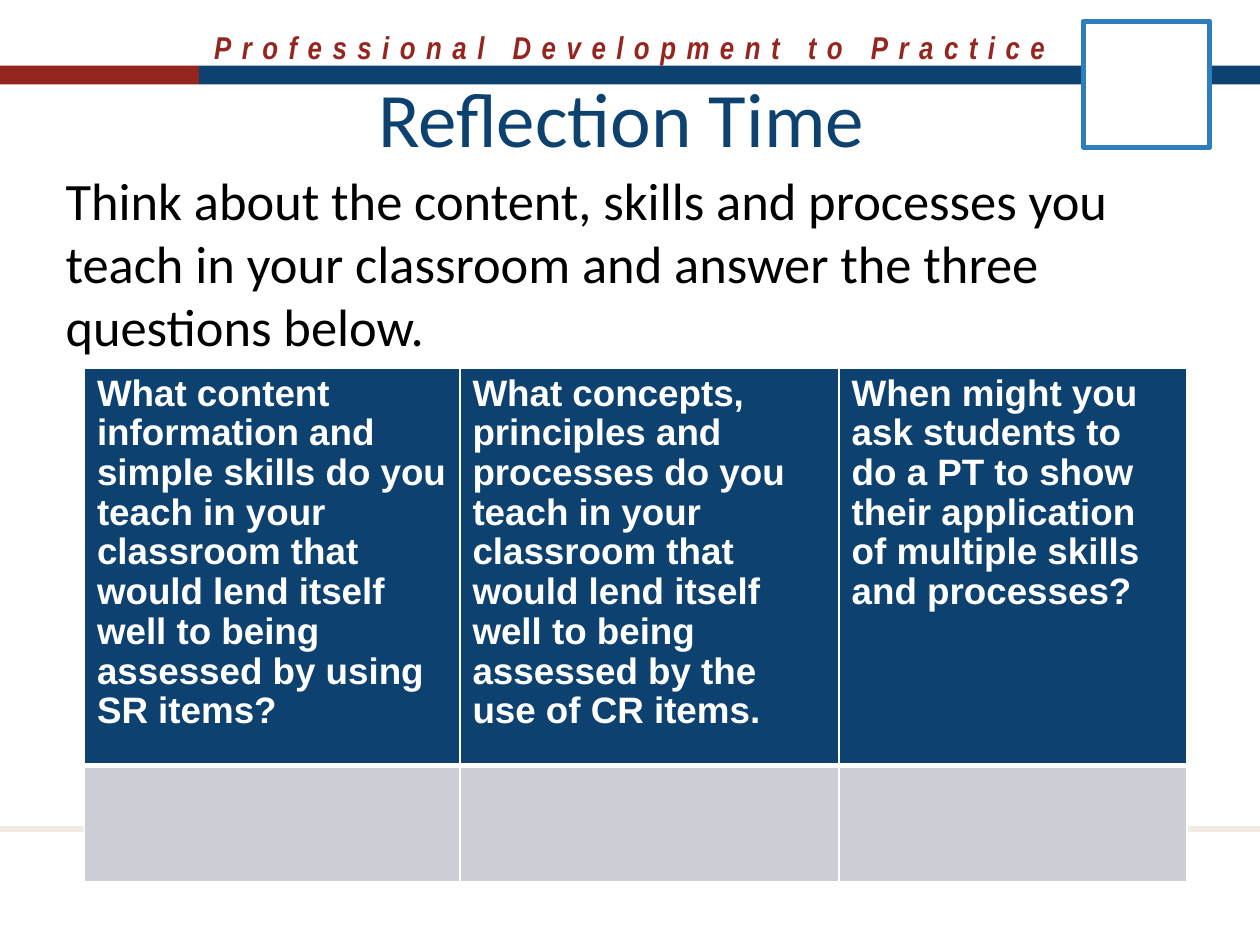
from dataclasses import dataclass

from pptx import Presentation
from pptx.dml.color import RGBColor as RGB
from pptx.enum.shapes import MSO_CONNECTOR as CONN, MSO_SHAPE as SHAPE
from pptx.enum.text import MSO_ANCHOR as ANCHOR, MSO_AUTO_SIZE as FIT, PP_ALIGN as ALIGN
from pptx.oxml import parse_xml
from pptx.oxml.ns import nsdecls
from pptx.oxml.xmlchemy import OxmlElement
from pptx.util import Inches, Pt


@dataclass(frozen=True)
class Theme:
    """Colours, fonts and type sizes of the slide."""
    red: str = "95261F"
    navy: str = "0D4170"
    blue: str = "2D7EBA"
    sand: str = "F2EDE2"
    grey: str = "CCCFD5"
    white: str = "FFFFFF"
    black: str = "000000"
    banner_font: str = "Arial Narrow"
    text_font: str = "Calibri"
    table_font: str = "Arial"
    banner_pt: int = 18
    title_pt: int = 44
    body_pt: int = 30
    table_pt: int = 21


T = Theme()
WIDTH, HEIGHT = 10, 7.5
COLS = [2.98, 3.01, 2.76]
ROWS = [3.02, 0.92]
QUESTIONS = [
    "What content information and simple skills do you teach in your classroom "
    "that would lend itself well to being assessed by using SR items?",
    "What concepts, principles and processes do you teach in your classroom "
    "that would lend itself well to being assessed by the use of CR items.",
    "When might you ask students to do a PT to show their application of "
    "multiple skills and processes?",
]


def box(x, y, w, h):
    """Convert a place in inches to slide units."""
    return [Inches(v) for v in (x, y, w, h)]


def write(tf, text, color, **font):
    """Write one formatted paragraph and return it."""
    tf.word_wrap = True
    p = tf.paragraphs[0]
    r = p.add_run()
    r.text = text
    for key, value in font.items():
        setattr(r.font, key, value)
    r.font.color.rgb = RGB.from_string(color)
    return p


def add_rect(s, place, fill, line=None):
    """Add a flat rectangle with an optional outline."""
    sp = s.shapes.add_shape(SHAPE.RECTANGLE, *box(*place))
    sp.shadow.inherit = False
    sp.fill.solid()
    sp.fill.fore_color.rgb = RGB.from_string(fill)
    if line:
        sp.line.color.rgb = RGB.from_string(line)
        sp.line.width = Pt(3)
    else:
        sp.line.fill.background()


def add_rule(s, y):
    """Add a pale rule across the whole slide."""
    line = s.shapes.add_connector(CONN.STRAIGHT, *box(0, y, WIDTH, y))
    line.line.color.rgb = RGB.from_string(T.sand)
    line.line.width = Pt(3)
    line._element.spPr.append(OxmlElement("a:effectLst"))


def add_banner(s, text):
    """Add the spaced heading above the colour bars."""
    tf = s.shapes.add_textbox(*box(0, 0.17, WIDTH, 0.4)).text_frame
    p = write(tf, text, T.red, name=T.banner_font, size=Pt(T.banner_pt), bold=True, italic=True)
    p.alignment = ALIGN.CENTER
    p.runs[0]._r.get_or_add_rPr().set("spc", "600")


def fill_placeholder(sp, place, text, color, size):
    """Move a placeholder and give it formatted text."""
    sp.left, sp.top, sp.width, sp.height = box(*place)
    sp.text_frame.auto_size = FIT.NONE
    return write(sp.text_frame, text, color, name=T.text_font, size=Pt(size))


def remove_bullet(p):
    """Set a paragraph flush left without a bullet."""
    pPr = p._p.get_or_add_pPr()
    pPr.set("marL", "0")
    pPr.set("indent", "0")
    pPr.append(OxmlElement("a:buNone"))


def style_cell(cell, fill, top, bottom):
    """Give a cell white borders and a solid fill."""
    tcPr = cell._tc.get_or_add_tcPr()
    for side, width in {"L": 1, "R": 1, "T": top, "B": bottom}.items():
        tcPr.append(parse_xml(
            f'<a:ln{side} {nsdecls("a")} w="{Pt(width)}"><a:solidFill>'
            f'<a:srgbClr val="{T.white}"/></a:solidFill></a:ln{side}>'))
    cell.fill.solid()
    cell.fill.fore_color.rgb = RGB.from_string(fill)


def add_questions(s):
    """Add the table of questions with room for answers."""
    place = box(0.67, 2.92, sum(COLS), sum(ROWS))
    table = s.shapes.add_table(len(ROWS), len(COLS), *place).table
    table.horz_banding = False
    for row, height in zip(table.rows, ROWS):
        row.height = Inches(height)
    for i, (width, question) in enumerate(zip(COLS, QUESTIONS)):
        table.columns[i].width = Inches(width)
        head, answer = table.cell(0, i), table.cell(1, i)
        style_cell(head, T.navy, 1, 3)
        style_cell(answer, T.grey, 3, 1)
        p = write(head.text_frame, question, T.white,
                  name=T.table_font, size=Pt(T.table_pt), bold=True)
        p.line_spacing = 0.97


def main():
    """Build and save the slide."""
    prs = Presentation()
    prs.slide_width, prs.slide_height = Inches(WIDTH), Inches(HEIGHT)
    s = prs.slides.add_slide(prs.slide_layouts[1])
    add_banner(s, "Professional Development to Practice")
    split = 1.58
    add_rect(s, (0, 0.52, split, 0.15), T.red)
    add_rect(s, (split, 0.52, WIDTH - split, 0.15), T.navy)
    add_rule(s, 6.58)
    title, body = s.placeholders
    p = fill_placeholder(title, (0.5, 0.33, 9, 1.2), "Reflection Time ", T.navy, T.title_pt)
    p.alignment = ALIGN.CENTER
    title.text_frame.vertical_anchor = ANCHOR.MIDDLE
    p = fill_placeholder(
        body, (0.42, 1.28, 9, 4.3),
        "Think about the content, skills and processes you teach in your "
        "classroom and answer the three questions below.", T.black, T.body_pt)
    remove_bullet(p)
    p.space_before = Pt(0)
    add_questions(s)
    add_rect(s, (8.6, 0.17, 1, 1), T.white, T.blue)
    prs.save("out.pptx")


if __name__ == "__main__":
    main()
